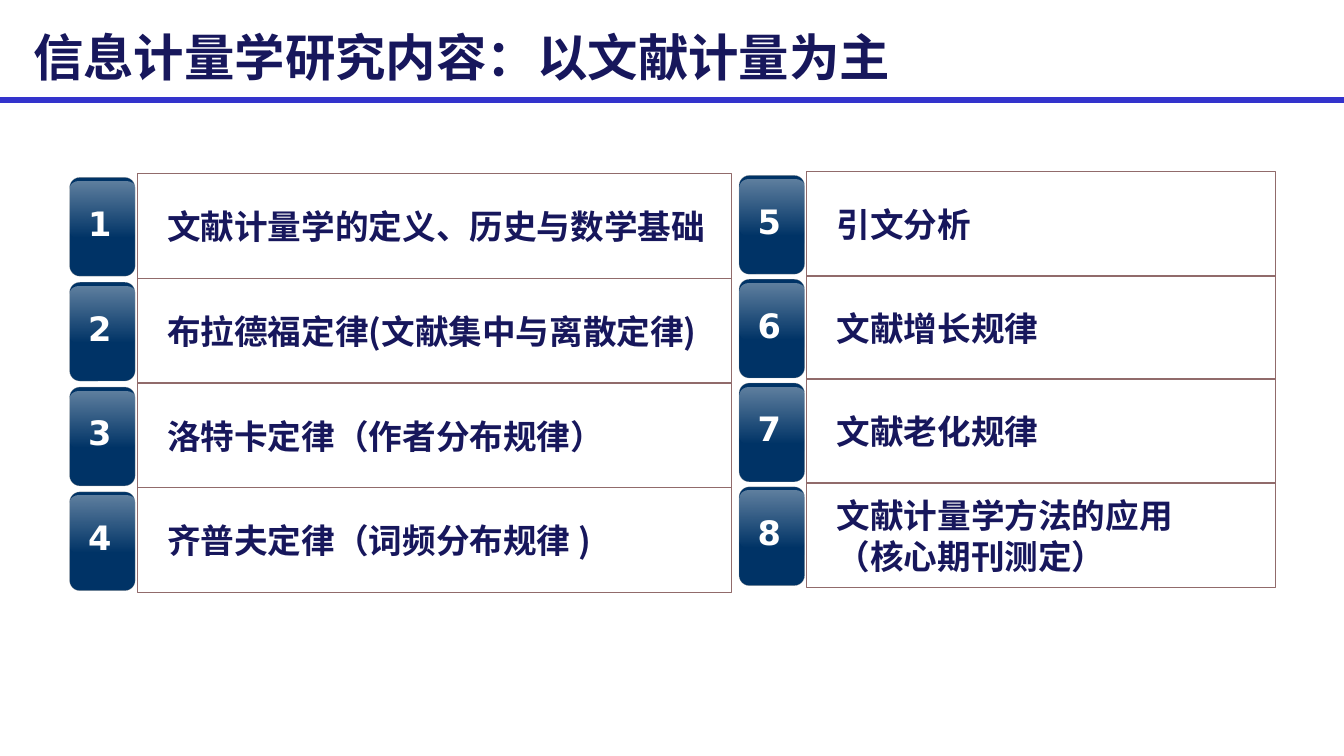
from dataclasses import dataclass
from lxml.etree import SubElement
from pptx import Presentation
from pptx.dml.color import RGBColor
from pptx.enum.shapes import MSO_CONNECTOR, MSO_SHAPE
from pptx.enum.text import MSO_ANCHOR, PP_ALIGN
from pptx.oxml.ns import qn
from pptx.util import Inches, Pt

# Content
TITLE = "信息计量学研究内容：以文献计量为主"
TOPICS_LEFT = [
    ["文献计量学的定义、历史与数学基础"],
    ["布拉德福定律(文献集中与离散定律)"],
    ["洛特卡定律（作者分布规律）"],
    ["齐普夫定律（词频分布规律 )"],
]
TOPICS_RIGHT = [
    ["引文分析"],
    ["文献增长规律"],
    ["文献老化规律"],
    ["文献计量学方法的应用", "（核心期刊测定）"],
]


@dataclass(frozen=True)
class Theme:
    ink: str = "17175C"
    rule: str = "3333CC"
    frame: str = "916B6B"
    badge: str = "003366"
    badge_edge: str = "969696"
    white: str = "FFFFFF"
    text_font: str = "Noto Sans CJK SC"
    number_font: str = "DejaVu Sans"
    title_size: int = 36
    body_size: int = 24
    body_leading: int = 29


THEME = Theme()

# Grid, in inches
WIDTH, HEIGHT = 13.33, 7.5
RULE_TOP = 0.99
ROW_HEIGHT = 1.04
BADGE_WIDTH, BADGE_HEIGHT, GLOSS_HEIGHT = 0.65, 0.98, 0.56
BADGE_DROP, GLOSS_DROP = 0.04, 0.08
FRAME_OFFSET = 0.67
NUMBER_SIDE, NUMBER_OFFSET = 0.98, -0.19
COLUMNS = [
    dict(topics=TOPICS_LEFT, left=0.69, top=1.72, pitch=1.04, frame_width=5.9),
    dict(topics=TOPICS_RIGHT, left=7.33, top=1.7, pitch=1.03, frame_width=4.65),
]

TITLE_FORMAT = dict(size=Pt(THEME.title_size), name=THEME.text_font, bold=True)
TOPIC_FORMAT = dict(TITLE_FORMAT, size=Pt(THEME.body_size))
NUMBER_FORMAT = dict(TOPIC_FORMAT, name=THEME.number_font)


def color(value):
    return RGBColor.from_string(value)


def set_opacity(element, percents):
    for node, percent in zip(element.iter(qn("a:srgbClr")), percents):
        SubElement(node, qn("a:alpha"), val=str(percent * 1000))


def write(box, lines, formats, ink, indent=0, **layout):
    frame = box.text_frame
    frame.word_wrap = True
    frame.vertical_anchor = MSO_ANCHOR.MIDDLE
    for index, line in enumerate(lines):
        para = frame.add_paragraph() if index else frame.paragraphs[0]
        for name, value in layout.items():
            setattr(para, name, value)
        if indent:
            para._p.get_or_add_pPr().set("marL", str(Inches(indent)))
        span = para.add_run()
        span.text = line
        for name, value in formats.items():
            setattr(span.font, name, value)
        span.font.color.rgb = color(ink)
        SubElement(span.font._element, qn("a:ea"), typeface=formats["name"])


def add_box(page, kind, left, top, width, height, corner=None):
    box = page.shapes.add_shape(kind, *map(Inches, (left, top, width, height)))
    box.shadow.inherit = False
    if corner:
        box.adjustments[0] = corner
    return box


def add_text(page, left, top, width, height):
    return page.shapes.add_textbox(*map(Inches, (left, top, width, height)))


def add_topic(page, number, lines, left, top, frame_width):
    # Framed topic
    frame = add_box(page, MSO_SHAPE.RECTANGLE, left + FRAME_OFFSET, top,
                    frame_width, ROW_HEIGHT)
    frame.fill.background()
    frame.line.color.rgb = color(THEME.frame)
    frame.line.width = Pt(0.75)
    frame.text_frame.margin_right = 0
    write(frame, lines, TOPIC_FORMAT, THEME.ink, indent=0.2,
          alignment=PP_ALIGN.LEFT, line_spacing=Pt(THEME.body_leading))

    # Badge
    badge = add_box(page, MSO_SHAPE.ROUNDED_RECTANGLE, left, top + BADGE_DROP,
                    BADGE_WIDTH, BADGE_HEIGHT, 0.157)
    badge.fill.solid()
    badge.fill.fore_color.rgb = color(THEME.badge)
    badge.line.color.rgb = color(THEME.badge_edge)
    badge.line.width = Pt(0.25)
    set_opacity(badge.line._get_or_add_ln(), [59])

    # Gloss fading downwards
    gloss = add_box(page, MSO_SHAPE.ROUNDED_RECTANGLE, left, top + GLOSS_DROP,
                    BADGE_WIDTH, GLOSS_HEIGHT, 0.143)
    gloss.line.fill.background()
    gloss.fill.gradient()
    gloss.fill.gradient_angle = 270
    for stop in gloss.fill.gradient_stops:
        stop.color.rgb = color(THEME.white)
    set_opacity(gloss._element.spPr, [38, 0])

    # Number
    box = add_text(page, left + NUMBER_OFFSET, top, NUMBER_SIDE, NUMBER_SIDE)
    write(box, [str(number)], NUMBER_FORMAT, THEME.white,
          alignment=PP_ALIGN.CENTER)


def main():
    deck = Presentation()
    deck.slide_width, deck.slide_height = Inches(WIDTH), Inches(HEIGHT)
    page = deck.slides.add_slide(deck.slide_layouts[6])

    # Title and rule
    rule = page.shapes.add_connector(
        MSO_CONNECTOR.STRAIGHT, 0, Inches(RULE_TOP), Inches(WIDTH), Inches(RULE_TOP))
    rule.line.color.rgb = color(THEME.rule)
    rule.line.width = Pt(4.5)
    SubElement(rule._element.spPr, qn("a:effectLst"))
    write(add_text(page, 0.23, 0.2, 10.14, 0.71), [TITLE], TITLE_FORMAT, THEME.ink)

    # Numbered topics, column by column
    number = 0
    for column in COLUMNS:
        for row, lines in enumerate(column["topics"]):
            number += 1
            add_topic(page, number, lines, column["left"],
                      column["top"] + row * column["pitch"], column["frame_width"])

    deck.save("out.pptx")


if __name__ == "__main__":
    main()
